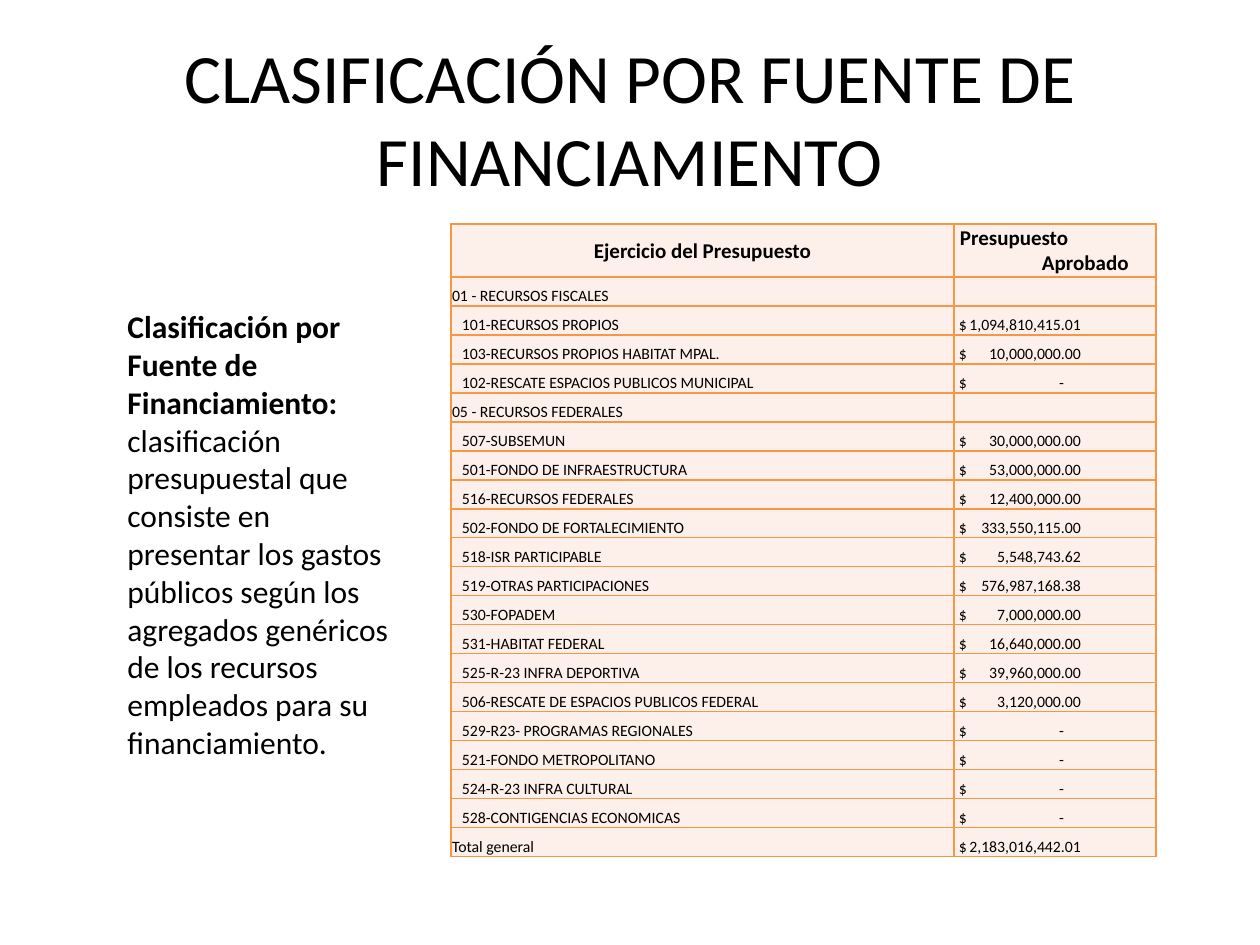
from pptx import Presentation
from pptx.dml.color import RGBColor
from pptx.enum.text import MSO_ANCHOR, MSO_AUTO_SIZE, PP_ALIGN
from pptx.oxml.ns import qn
from pptx.util import Pt
from lxml import etree

LEFT, CENTER = PP_ALIGN.LEFT, PP_ALIGN.CENTER
MIDDLE, BOTTOM = MSO_ANCHOR.MIDDLE, MSO_ANCHOR.BOTTOM
NO_FIT = MSO_AUTO_SIZE.NONE

FONT, BLACK, FILL, BORDER = "Calibri", "000000", "FDEFE9", "F79646"

TITLE = "CLASIFICACIÓN POR FUENTE DE FINANCIAMIENTO"
TERM = "Clasificación por Fuente de Financiamiento:"
DEFINITION = (" clasificación presupuestal que consiste en presentar los gastos "
              "públicos según los agregados genéricos de los recursos empleados "
              "para su financiamiento.")
BUDGET_HEADER = "Ejercicio del Presupuesto"
AMOUNT_HEADER = [("Presupuesto", 5), ("Aprobado", 87)]  # text, indent

# Label, amount, indented
ROWS = [
    ("01 - RECURSOS FISCALES", "", False),
    ("101-RECURSOS PROPIOS", "1,094,810,415.01", True),
    ("103-RECURSOS PROPIOS HABITAT MPAL.", "10,000,000.00", True),
    ("102-RESCATE ESPACIOS PUBLICOS MUNICIPAL", "-", True),
    ("05 - RECURSOS FEDERALES", "", False),
    ("507-SUBSEMUN", "30,000,000.00", True),
    ("501-FONDO DE INFRAESTRUCTURA", "53,000,000.00", True),
    ("516-RECURSOS FEDERALES", "12,400,000.00", True),
    ("502-FONDO DE FORTALECIMIENTO", "333,550,115.00", True),
    ("518-ISR PARTICIPABLE", "5,548,743.62", True),
    ("519-OTRAS PARTICIPACIONES", "576,987,168.38", True),
    ("530-FOPADEM", "7,000,000.00", True),
    ("531-HABITAT FEDERAL", "16,640,000.00", True),
    ("525-R-23 INFRA DEPORTIVA", "39,960,000.00", True),
    ("506-RESCATE DE ESPACIOS PUBLICOS FEDERAL", "3,120,000.00", True),
    ("529-R23- PROGRAMAS REGIONALES", "-", True),
    ("521-FONDO METROPOLITANO", "-", True),
    ("524-R-23 INFRA CULTURAL", "-", True),
    ("528-CONTIGENCIAS ECONOMICAS", "-", True),
    ("Total general", "2,183,016,442.01", False),
]
COLUMNS = [503, 202]
HEADER_H, ROW_H = 53, 29
AMOUNT_TAB, DASH_TAB = 122, 105


def px(n):
    return round(n * 914400 / 126)


def rgb(color):
    return RGBColor.from_string(color)


def add_text(p, text, size=9, bold=False, align=LEFT, indent=0, tab=None):
    p.alignment = align
    pPr = p._p.get_or_add_pPr()
    if indent:
        pPr.set("marL", str(px(indent)))
        pPr.set("indent", "0")
    if tab:
        stops = etree.SubElement(pPr, qn("a:tabLst"))
        etree.SubElement(stops, qn("a:tab"), pos=str(px(tab)), algn="r")
    if not text:  # keep an empty cell at the row's text size
        etree.SubElement(p._p, qn("a:endParaRPr"), sz=str(size * 100))
        return
    r = p.add_run()
    r.text = text
    r.font.name, r.font.size, r.font.bold = FONT, Pt(size), bold
    r.font.color.rgb = rgb(BLACK)


def format_cell(cell, anchor, left=1):
    cell.vertical_anchor = anchor
    cell.margin_left, cell.margin_right = px(left), px(1)
    cell.margin_top, cell.margin_bottom = px(1), 0
    tcPr = cell._tc.get_or_add_tcPr()
    for side in ("a:lnL", "a:lnR", "a:lnT", "a:lnB"):
        ln = etree.SubElement(tcPr, qn(side), w=str(Pt(1)))
        solid = etree.SubElement(ln, qn("a:solidFill"))
        etree.SubElement(solid, qn("a:srgbClr"), val=BORDER)
    cell.fill.solid()
    cell.fill.fore_color.rgb = rgb(FILL)


prs = Presentation()
prs.slide_width, prs.slide_height = px(1260), px(945)
s = prs.slides.add_slide(prs.slide_layouts[5])

# Title
title = s.shapes.title
title.left, title.top, title.width, title.height = px(63), px(38), px(1134), px(158)
tf = title.text_frame
tf.auto_size, tf.vertical_anchor = NO_FIT, MIDDLE
add_text(tf.paragraphs[0], TITLE, size=39.6, align=CENTER)

# Budget table
frame = s.shapes.add_table(len(ROWS) + 1, len(COLUMNS), px(451), px(224),
                           px(sum(COLUMNS)), px(HEADER_H + ROW_H * len(ROWS)))
table = frame.table
table.horz_banding = False
for column, width in zip(table.columns, COLUMNS):
    column.width = px(width)
for i, row in enumerate(table.rows):
    row.height = px(ROW_H if i else HEADER_H)

# Table header
budget, amount = table.rows[0].cells
format_cell(budget, MIDDLE)
add_text(budget.text_frame.paragraphs[0], BUDGET_HEADER, size=12, bold=True, align=CENTER)
format_cell(amount, MIDDLE)
tf = amount.text_frame
for i, (word, indent) in enumerate(AMOUNT_HEADER):
    p = tf.add_paragraph() if i else tf.paragraphs[0]
    add_text(p, word, size=12, bold=True, indent=indent)

# Table rows: the currency sign stays left, amounts end at a right tab
for i, (label, value, indented) in enumerate(ROWS, 1):
    name, amount = table.rows[i].cells
    format_cell(name, BOTTOM, left=11 if indented else 1)
    add_text(name.text_frame.paragraphs[0], label)
    format_cell(amount, BOTTOM, left=5)
    add_text(amount.text_frame.paragraphs[0], f"$\t{value}" if value else "",
             tab=DASH_TAB if value == "-" else AMOUNT_TAB)

# Definition
box = s.shapes.add_textbox(px(115), px(301), px(297), px(509))
tf = box.text_frame
tf.word_wrap = True
p = tf.paragraphs[0]
add_text(p, TERM, size=18, bold=True)
add_text(p, DEFINITION, size=18)

prs.save("out.pptx")
